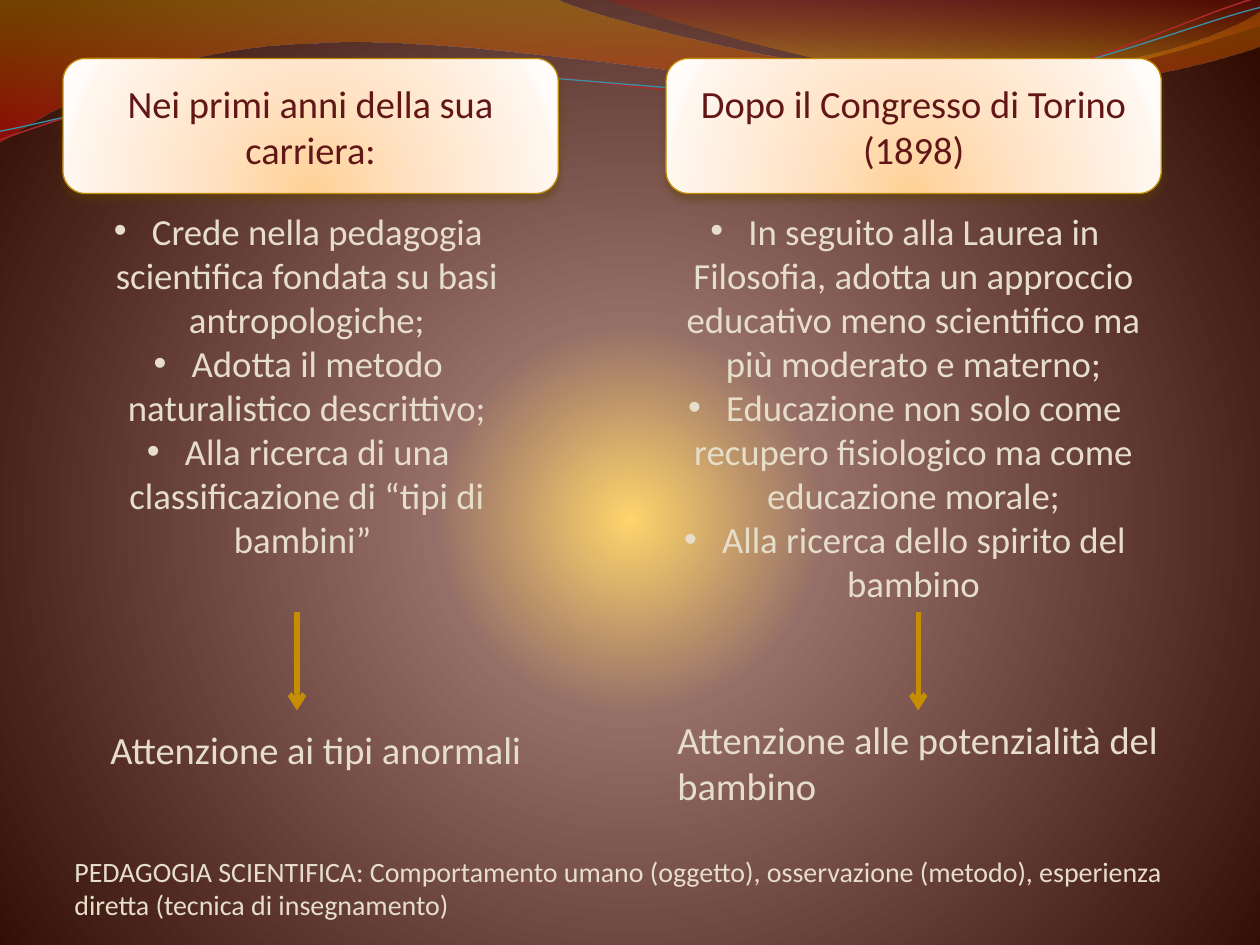
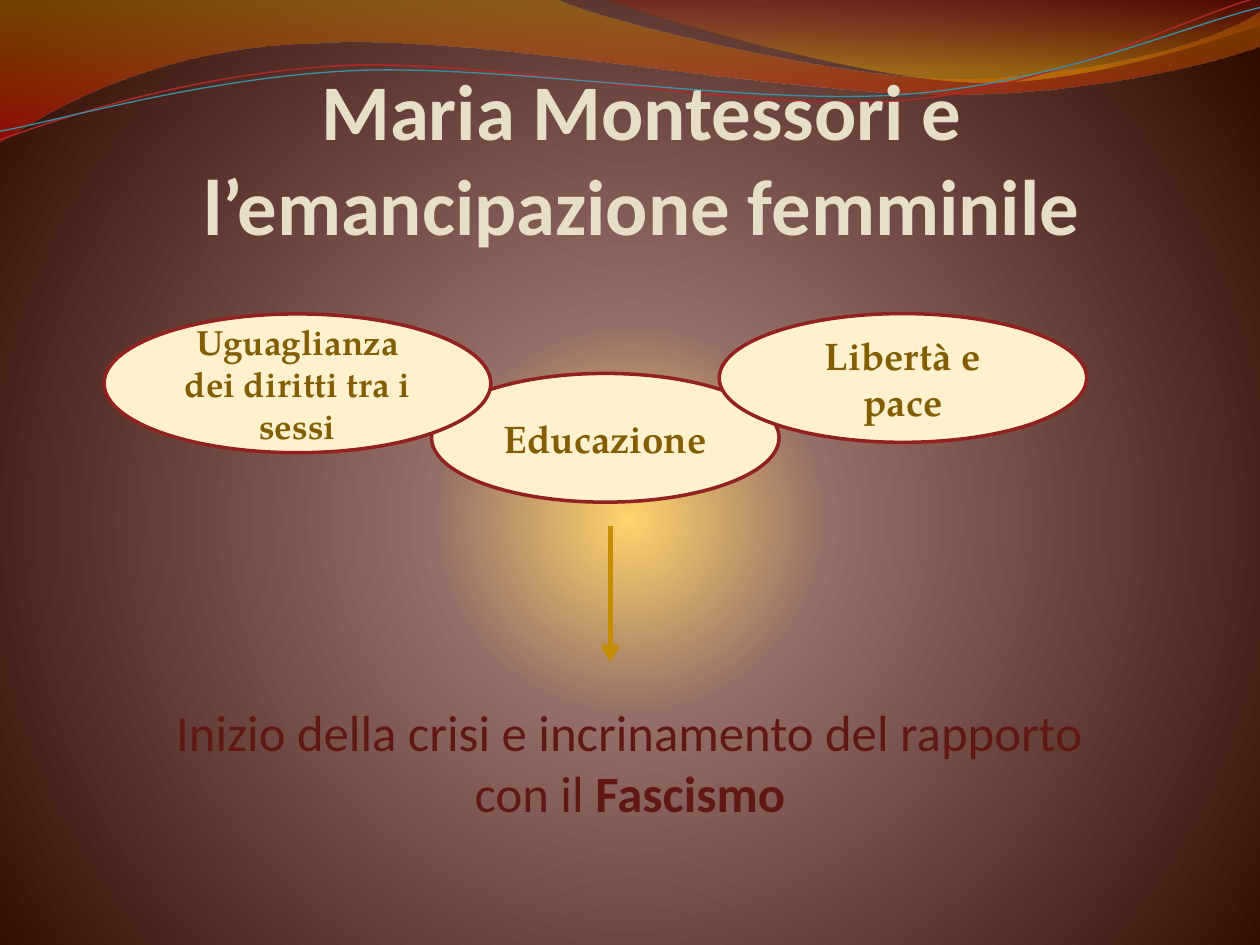
from lxml import etree
from pptx import Presentation
from pptx.dml.color import RGBColor
from pptx.enum.shapes import MSO_CONNECTOR, MSO_SHAPE
from pptx.enum.text import MSO_ANCHOR, MSO_AUTO_SIZE, PP_ALIGN
from pptx.oxml.ns import qn
from pptx.util import Pt

COLORS = {
    "cream": "E7DEC9",
    "maroon": "621717",
    "gold": "C58D01",
    "card_line": "BF8905",
    "card_shadow": "5B4101",
    "oval_fill": "FFF1CE",
    "oval_line": "922222",
    "oval_text": "835E01",
    "wave_red": "AC2829",
    "wave_blue": "3891A7",
}
BODY_FONT = "Calibri"
OVAL_FONT = "TeX Gyre Pagella"

# Gradient stops: position in percent, colour, opacity in percent
BACKGROUND_STOPS = [(0, "FED46C", 100), (25, "956E68", 100), (100, "2F0A00", 100)]
CARD_STOPS = [(0, "FFD196", 100), (43, "FFE3C6", 100),
              (93, "FFF6ED", 100), (100, "FFFCF9", 100)]
LONG_BAND_STOPS = [(0, "C38B00", 45), (100, "D60305", 55)]
SHORT_BAND_STOPS = [(0, "A11112", 30), (80, "E9A600", 45)]

# Wave outlines: one point starts or draws a line, three points draw a curve
LONG_BAND = [
    [(0, 0)], [(317, -0.7)],
    [(343, 12), (478, 45), (546, 45)], [(614, 45), (690, 27), (720, 6.5)],
    [(720.7, 26)],
    [(708, 32), (626, 55), (537, 54)], [(448, 54), (275, 20), (185, 24.5)],
    [(93, 26), (33, 60), (-0.7, 81.4)],
]
SHORT_BAND = [
    [(345, -0.7)],
    [(366, 8), (491, 45), (554, 47)], [(616, 50), (692, 23), (720, 15)],
    [(720, 0)],
]
RED_WAVE = [
    [(0, 80)],
    [(35, 67), (114, 41), (199, 37.4)], [(284, 34), (427, 64), (513, 57.6)],
    [(600, 51), (675, 11), (718.6, -1.4)],
]
BLUE_WAVE = [
    [(0, 75)],
    [(34, 69), (118, 44), (204, 40.3)], [(290, 37), (430, 60.5), (516, 54)],
    [(602, 48), (676, 15), (720, 4.3)],
]


def rgb(name):
    return RGBColor.from_string(COLORS[name])


def add_child(parent, tag, **attributes):
    child = etree.SubElement(parent, qn(tag))
    for name, value in attributes.items():
        child.set(name, str(value))
    return child


def add_color(parent, color, opacity):
    element = add_child(parent, "a:srgbClr", val=color)
    if opacity < 100:
        add_child(element, "a:alpha", val=opacity * 1000)


def set_gradient(fill, properties, stops, focus=None):
    """Fill downwards, or in circles around focus (left, top, right, bottom percent)."""
    fill.background()
    gradient = etree.Element(qn("a:gradFill"), rotWithShape="1")
    stop_list = add_child(gradient, "a:gsLst")
    for position, color, opacity in stops:
        add_color(add_child(stop_list, "a:gs", pos=position * 1000), color, opacity)
    if focus:
        circle = add_child(gradient, "a:path", path="circle")
        edges = {side: edge * 1000 for side, edge in zip("ltrb", focus)}
        add_child(circle, "a:fillToRect", **edges)
    else:
        add_child(gradient, "a:lin", ang=90 * 60000, scaled=1)
    properties.replace(properties.find(qn("a:noFill")), gradient)


def bend_lines(shape, segments):
    """Merge the three lines of each three-point segment into one Bézier curve."""
    lines = iter(shape.element.findall(".//" + qn("a:lnTo")))
    for segment in segments:
        group = [next(lines) for _ in segment]
        if len(group) == 3:
            curve = etree.Element(qn("a:cubicBezTo"))
            group[0].addprevious(curve)
            for line in group:
                curve.append(line[0])
                line.getparent().remove(line)


def add_wave(slide, outline, stops=None, line=None, width=0.75):
    """Draw a filled band or a thin line and move it to the slide master."""
    start, *points = [(Pt(x), Pt(y)) for segment in outline for x, y in segment]
    builder = slide.shapes.build_freeform(*start)
    builder.add_line_segments(points, close=False)
    shape = builder.convert_to_shape()
    bend_lines(shape, outline[1:])
    shape.shadow.inherit = False
    if stops:
        add_child(shape.element.find(".//" + qn("a:path")), "a:close")
        set_gradient(shape.fill, shape.element.spPr, stops)
        shape.line.fill.background()
    else:
        shape.fill.background()
        shape.line.color.rgb = rgb(line)
        shape.line.width = Pt(width)
    master_shapes = slide.slide_layout.slide_master.shapes
    shape.element.nvSpPr.cNvPr.set("id", str(len(master_shapes) + 2))
    master_shapes.element.append(shape.element)


def decorate_master(slide):
    master = slide.slide_layout.slide_master
    fill = master.background.fill
    properties = master.element.find(".//" + qn("p:bgPr"))
    set_gradient(fill, properties, BACKGROUND_STOPS, (10, 110, 10, 100))
    add_wave(slide, LONG_BAND, stops=LONG_BAND_STOPS)
    add_wave(slide, SHORT_BAND, stops=SHORT_BAND_STOPS)
    add_wave(slide, RED_WAVE, line="wave_red", width=0.85)
    add_wave(slide, BLUE_WAVE, line="wave_blue")


def format_paragraph(paragraph, size, color, align=PP_ALIGN.CENTER, font=BODY_FONT, bold=False):
    paragraph.alignment = align
    for run in paragraph.runs:
        run.font.size = Pt(size)
        run.font.name = font
        run.font.bold = bold
        run.font.color.rgb = rgb(color)


def add_text(slide, box, text, size, color="cream", align=PP_ALIGN.LEFT):
    text_box = slide.shapes.add_textbox(*map(Pt, box))
    text_frame = text_box.text_frame
    text_frame.word_wrap = True
    text_frame.text = text
    for paragraph in text_frame.paragraphs:
        format_paragraph(paragraph, size, color, align)
    return text_frame


def add_bullets(slide, box, items):
    text_frame = add_text(slide, box, "\n".join(items), 21, align=PP_ALIGN.CENTER)
    for paragraph in text_frame.paragraphs:
        properties = paragraph._p.get_or_add_pPr()
        add_child(properties, "a:buFont", typeface="Arial")
        add_child(properties, "a:buChar", char="•")


def add_card(slide, box, text):
    card = slide.shapes.add_shape(MSO_SHAPE.ROUNDED_RECTANGLE, *map(Pt, box))
    card.shadow.inherit = False
    properties = card.element.spPr
    set_gradient(card.fill, properties, CARD_STOPS, (50, 130, 50, -30))
    card.line.color.rgb = rgb("card_line")
    card.line.width = Pt(0.75)
    shadow = add_child(properties.find(qn("a:effectLst")), "a:outerShdw",
                       blurRad=Pt(4.5), dist=Pt(3), dir=90 * 60000, rotWithShape=0)
    add_color(shadow, COLORS["card_shadow"], 48)
    card.text_frame.text = text
    card.text_frame.vertical_anchor = MSO_ANCHOR.MIDDLE
    format_paragraph(card.text_frame.paragraphs[0], 22, "maroon")


def add_oval(slide, box, text, size=22):
    oval = slide.shapes.add_shape(MSO_SHAPE.OVAL, *map(Pt, box))
    oval.shadow.inherit = False
    oval.fill.solid()
    oval.fill.fore_color.rgb = rgb("oval_fill")
    oval.line.color.rgb = rgb("oval_line")
    oval.line.width = Pt(2)
    oval.text_frame.text = text
    oval.text_frame.vertical_anchor = MSO_ANCHOR.MIDDLE
    format_paragraph(oval.text_frame.paragraphs[0], size, "oval_text",
                     font=OVAL_FONT, bold=True)


def add_down_arrow(slide, x, top, bottom):
    arrow = slide.shapes.add_connector(MSO_CONNECTOR.STRAIGHT,
                                       Pt(x), Pt(top), Pt(x), Pt(bottom))
    arrow.line.color.rgb = rgb("gold")
    arrow.line.width = Pt(3)
    add_child(arrow.element.spPr.find(qn("a:ln")), "a:tailEnd", type="arrow")
    add_child(arrow.element.spPr, "a:effectLst")


def set_title(slide, box, text):
    title = slide.shapes.title
    title.left, title.top, title.width, title.height = map(Pt, box)
    text_frame = title.text_frame
    text_frame.text = text
    text_frame.word_wrap = True
    text_frame.auto_size = MSO_AUTO_SIZE.NONE
    text_frame.vertical_anchor = MSO_ANCHOR.TOP
    format_paragraph(text_frame.paragraphs[0], 45, "cream", bold=True)


def fill_periods_slide(slide):
    add_card(slide, (36, 33.4, 283, 77.2), "Nei primi anni della sua carriera:")
    add_card(slide, (380.6, 33.4, 283, 77.2), "Dopo il Congresso di Torino (1898)")
    add_bullets(slide, (41.8, 115.5, 267, 210), [
        " Crede nella pedagogia scientifica fondata su basi antropologiche;",
        " Adotta il metodo naturalistico descrittivo;",
        " Alla ricerca di una classificazione di “tipi di bambini” ",
    ])
    add_bullets(slide, (378, 115.5, 288, 255), [
        " In seguito alla Laurea in Filosofia, adotta un approccio educativo "
        "meno scientifico ma più moderato e materno;",
        " Educazione non solo come recupero fisiologico ma come educazione morale;",
        " Alla ricerca dello spirito del bambino",
    ])
    for x in (169.7, 524.7):
        add_down_arrow(slide, x, 349.5, 406)
    add_text(slide, (56, 411.5, 254, 33), "Attenzione ai tipi anormali", 22)
    add_text(slide, (380, 405.5, 314, 59), "Attenzione alle potenzialità del bambino", 22)
    add_text(slide, (35.5, 484.5, 653, 46),
             "PEDAGOGIA SCIENTIFICA: Comportamento umano (oggetto), osservazione "
             "(metodo), esperienza diretta (tecnica di insegnamento)", 16)


def fill_emancipation_slide(slide):
    conclusion = add_text(slide, (72, 397, 576, 77),
                          "Inizio della crisi e incrinamento del rapporto con il ",
                          29, "maroon", PP_ALIGN.CENTER)
    paragraph = conclusion.paragraphs[0]
    paragraph.add_run().text = "Fascismo"
    format_paragraph(paragraph, 29, "maroon")
    paragraph.runs[-1].font.bold = True
    add_down_arrow(slide, 348.7, 300.5, 378)
    add_oval(slide, (246.6, 213.4, 198.6, 73.6), "Educazione")
    add_oval(slide, (59.5, 179.4, 221, 79.3), "Uguaglianza dei diritti tra i sessi", 20)
    add_oval(slide, (411, 179.2, 210, 73.6), "Libertà e pace")
    set_title(slide, (42.5, 31.7, 648, 90), "Maria Montessori e l’emancipazione femminile")


def main():
    presentation = Presentation()
    presentation.slide_width, presentation.slide_height = Pt(720), Pt(540)
    title_only, blank = presentation.slide_layouts[5], presentation.slide_layouts[6]
    periods_slide = presentation.slides.add_slide(blank)
    decorate_master(periods_slide)
    fill_periods_slide(periods_slide)
    fill_emancipation_slide(presentation.slides.add_slide(title_only))
    presentation.save("out.pptx")


if __name__ == "__main__":
    main()
